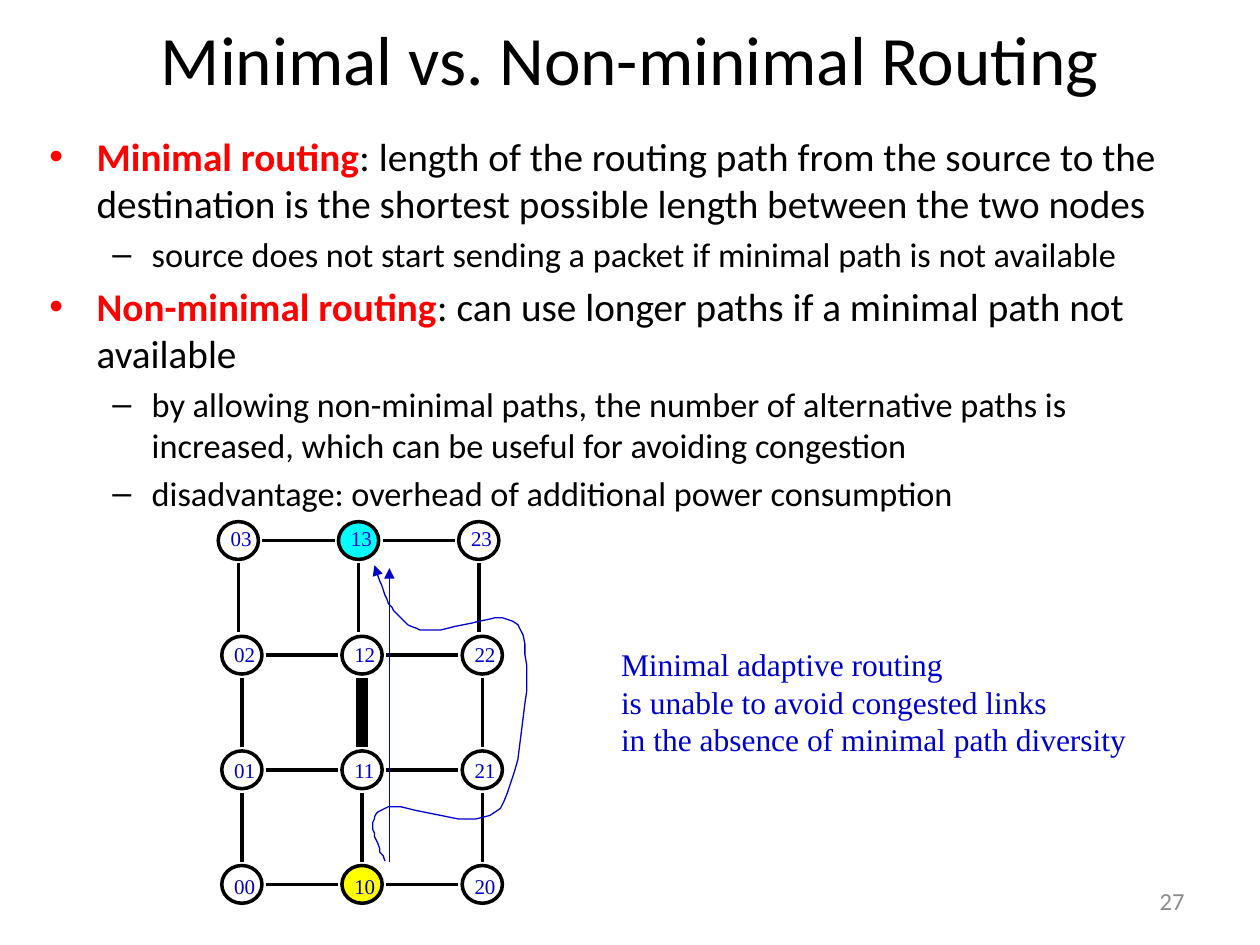
"""Build a slide comparing minimal and non-minimal routing on a mesh."""
import pptx
import pptx.dml.color
import pptx.enum.shapes
import pptx.enum.text
import pptx.oxml
import pptx.oxml.ns
import pptx.util
from pptx.util import Pt

BLACK, RED, BLUE, GRAY = "000000", "FF0000", "0000CC", "8C8C8C"
YELLOW, CYAN = "FFFF00", "00FFFF"
ALIGN = pptx.enum.text.PP_ALIGN
ANCHOR = pptx.enum.text.MSO_ANCHOR


def color(value):
    return pptx.dml.color.RGBColor.from_string(value)


class RoutingSlide:
    heading_font = "Calibri"
    label_font = "Times New Roman"

    def __init__(self, presentation):
        self.slide = presentation.slides.add_slide(presentation.slide_layouts[1])

    def place(self, shape, left, top, width, height):
        shape.left, shape.top = Pt(left), Pt(top)
        shape.width, shape.height = Pt(width), Pt(height)

    def run(self, paragraph, text, size, font, hue, bold=False):
        run = paragraph.add_run()
        run.text = text
        run.font.size, run.font.name, run.font.bold = Pt(size), font, bold
        run.font.color.rgb = color(hue)

    def title(self, text, box):
        shape = self.slide.shapes.title
        self.place(shape, *box)
        frame = shape.text_frame
        frame.auto_size = pptx.enum.text.MSO_AUTO_SIZE.NONE
        frame.vertical_anchor = ANCHOR.MIDDLE
        paragraph = frame.paragraphs[0]
        paragraph.alignment = ALIGN.CENTER
        self.run(paragraph, text, 39.6, self.heading_font, BLACK)

    def bullets(self, items, box):
        shape = self.slide.placeholders[1]
        self.place(shape, *box)
        frame = shape.text_frame
        frame.auto_size = pptx.enum.text.MSO_AUTO_SIZE.NONE
        for index, (level, term, text) in enumerate(items):
            paragraph = frame.add_paragraph() if index else frame.paragraphs[0]
            paragraph.level = level
            size = 19.6 if level else 22.4
            if term:
                self.run(paragraph, term, size, self.heading_font, RED, True)
            self.run(paragraph, text, size, self.heading_font, BLACK)

    def text(self, lines, box, size, font, hue, align=ALIGN.LEFT, anchor=ANCHOR.TOP, wrap=False):
        frame = self.slide.shapes.add_textbox(*map(Pt, box)).text_frame
        frame.word_wrap, frame.vertical_anchor = wrap, anchor
        for index, line in enumerate(lines):
            paragraph = frame.add_paragraph() if index else frame.paragraphs[0]
            paragraph.alignment = align
            self.run(paragraph, line, size, font, hue)

    def node(self, x, y, fill):
        width, height = 23, 21.6
        shape = self.slide.shapes.add_shape(
            pptx.enum.shapes.MSO_SHAPE.OVAL,
            Pt(x - width / 2), Pt(y - height / 2), Pt(width), Pt(height))
        shape.shadow.inherit = False
        if fill:
            shape.fill.solid()
            shape.fill.fore_color.rgb = color(fill)
        else:
            shape.fill.background()
        self.stroke(shape, BLACK, 2)

    def stroke(self, shape, hue, width, arrow=False):
        shape.line.color.rgb = color(hue)
        shape.line.width = Pt(width)
        if arrow:
            tail = pptx.oxml.parse_xml(
                f'<a:tailEnd {pptx.oxml.ns.nsdecls("a")} type="triangle"/>')
            shape.line._get_or_add_ln().append(tail)

    def line(self, start, end, hue=BLACK, width=2, arrow=False):
        connector = self.slide.shapes.add_connector(
            pptx.enum.shapes.MSO_CONNECTOR.STRAIGHT, *map(Pt, (*start, *end)))
        self.stroke(connector, hue, width, arrow)
        connector._element.spPr.append(
            pptx.oxml.parse_xml(f'<a:effectLst {pptx.oxml.ns.nsdecls("a")}/>'))

    def curve(self, start, segments, hue, width, steps=16):
        points = []
        origin = start
        for controls in segments:
            for step in range(1, steps + 1):
                t = step / steps
                weights = ((1 - t) ** 3, 3 * t * (1 - t) ** 2, 3 * t * t * (1 - t), t ** 3)
                points.append(tuple(
                    sum(weight * point[axis] for weight, point in zip(weights, (origin, *controls)))
                    for axis in (0, 1)))
            origin = controls[-1]
        builder = self.slide.shapes.build_freeform(*start, scale=float(Pt(1)))
        builder.add_line_segments(points, close=False)
        shape = builder.convert_to_shape()
        shape.shadow.inherit = False
        shape.fill.background()
        self.stroke(shape, hue, width, arrow=True)

    def mesh(self, columns, rows, fills, congested):
        def center(column, row):
            shift = 2 if row == rows - 1 else 0
            return 138.2 + 68.7 * column - shift, 505.4 - 65.5 * row

        nodes = [(column, row) for row in range(rows) for column in range(columns)]
        for column, row in nodes:
            x, y = center(column, row)
            if column < columns - 1:
                self.line((x + 13.7, y), (x + 55, y))
            if row:
                width = 6.5 if (column, row) == congested else 2
                self.line((x, y + 13), (x, y + 52.5), width=width)
            self.node(x, y, fills.get((column, row)))
        for column, row in nodes:
            x = center(column, row)[0]
            self.text([f"{column}{row}"], (x - 11.5, 495.4 - 66.24 * row, 26.6, 21.6),
                      12, self.label_font, BLUE)


def main():
    presentation = pptx.Presentation()
    presentation.slide_width, presentation.slide_height = Pt(720), Pt(540)
    page = RoutingSlide(presentation)
    page.title("Minimal vs. Non-minimal Routing", (36, 21.6, 648, 23))
    page.bullets([
        (0, "Minimal routing", ": length of the routing path from the source to the "
            "destination is the shortest possible length between the two nodes"),
        (1, "", "source does not start sending a packet if minimal path is not available"),
        (0, "Non-minimal routing", ": can use longer paths if a minimal path not available"),
        (1, "", "by allowing non-minimal paths, the number of alternative paths is "
            "increased, which can be useful for avoiding congestion"),
        (1, "", "disadvantage: overhead of additional power consumption"),
    ], (21, 72, 681, 213))
    page.text(["27"], (516, 500.5, 168, 28.8), 14, page.heading_font, GRAY,
              ALIGN.RIGHT, ANCHOR.MIDDLE, True)
    page.mesh(3, 4, {(1, 0): YELLOW, (1, 3): CYAN}, congested=(1, 2))
    page.line((222.5, 492.5), (222.5, 324.7), BLUE, 0.75, arrow=True)
    page.text(["Minimal adaptive routing", "is unable to avoid congested links",
               "in the absence of minimal path diversity"],
              (347.8, 365, 304, 72), 18, page.label_font, BLUE)
    page.curve((219.6, 491.8), [
        ((213.8, 478.8), (208.8, 466.6), (219.6, 461.5)),
        ((230.4, 456.5), (272.9, 478.8), (285.8, 461.5)),
        ((298.8, 444.2), (305.3, 376.6), (297.4, 359.3)),
        ((289.4, 342.7), (251.3, 365.8), (237.6, 359.3)),
        ((223.9, 353.5), (218.9, 338.4), (213.8, 323.3)),
    ], BLUE, 0.75)
    presentation.save("out.pptx")


if __name__ == "__main__":
    main()
